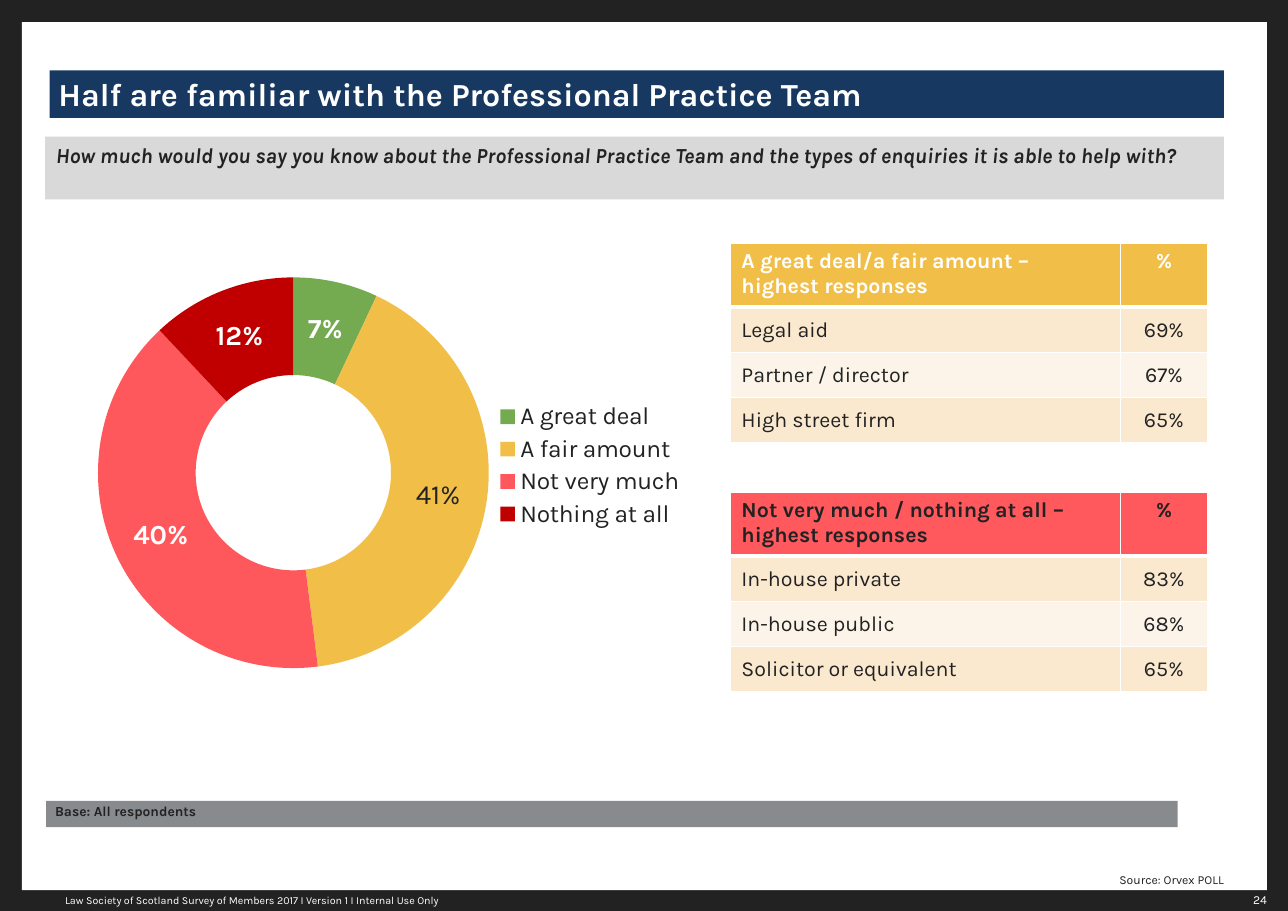
import pptx
import pptx.chart.data
import pptx.dml.color
import pptx.enum.chart
import pptx.enum.shapes
import pptx.enum.text
import pptx.oxml
import pptx.oxml.ns
import pptx.util

Inches, Pt = pptx.util.Inches, pptx.util.Pt
ALIGN, ANCHOR = pptx.enum.text.PP_ALIGN, pptx.enum.text.MSO_ANCHOR
FONT, INK, WHITE = "Karla", "222223", "FFFFFF"


def color(hex_value):
    return pptx.dml.color.RGBColor.from_string(hex_value)


def style(font, size, hex_value, bold=False, italic=False):
    font.name, font.size = FONT, Pt(size)
    font.bold, font.italic = bold, italic
    font.color.rgb = color(hex_value)


deck = pptx.Presentation()
deck.slide_width, deck.slide_height = Inches(11.69), Inches(8.27)
page = deck.slides.add_slide(deck.slide_layouts[6])

# Dark frame around a white sheet
page.background.fill.solid()
page.background.fill.fore_color.rgb = color(INK)

# Sheet, title, question, base bar and footer:
# bounds, fill, text, size, ink, bold, italic, alignment, anchor, insets, wrap
panels = [
    ((0.2, 0.2, 11.3, 7.88), WHITE, "", 8, INK, False, False,
     ALIGN.LEFT, ANCHOR.TOP, (0, 0), True),
    ((10.95, 8.06, 0.63, 0.23), None, "24", 8, WHITE, False, False,
     ALIGN.RIGHT, ANCHOR.TOP, (0.08, 0.04), True),
    ((0.59, 8.07, 5.35, 0.2), None,
     "Law Society of Scotland Survey of Members 2017 I Version 1 I Internal Use Only",
     7, WHITE, False, False, ALIGN.LEFT, ANCHOR.MIDDLE, (0, 0), False),
    ((7.89, 7.85, 3.22, 0.2), None, "Source: Orvex POLL", 8, INK, False, False,
     ALIGN.RIGHT, ANCHOR.BOTTOM, (0, 0), True),
    ((0.45, 0.64, 10.66, 0.43), "173861",
     "Half are familiar with the Professional Practice Team",
     21, WHITE, True, False, ALIGN.LEFT, ANCHOR.BOTTOM, (0.08, 0.04), True),
    ((0.41, 1.24, 10.7, 0.57), "D9D9D9",
     "How much would you say you know about the Professional Practice Team "
     "and the types of enquiries it is able to help with?",
     14, INK, True, True, ALIGN.LEFT, ANCHOR.TOP, (0.1, 0.05), True),
    ((0.42, 7.27, 10.27, 0.24), "888B8D", "Base: All respondents",
     9, INK, True, False, ALIGN.LEFT, ANCHOR.TOP, (0.08, 0.02), True),
]
for bounds, fill, text, size, ink, bold, italic, align, anchor, insets, wrap in panels:
    bounds = [Inches(length) for length in bounds]
    if fill:
        box = page.shapes.add_shape(pptx.enum.shapes.MSO_SHAPE.RECTANGLE, *bounds)
        box.shadow.inherit = False
        box.fill.solid()
        box.fill.fore_color.rgb = color(fill)
        box.line.fill.background()
    else:
        box = page.shapes.add_textbox(*bounds)
    if not text:
        continue
    frame = box.text_frame
    frame.margin_left = frame.margin_right = Inches(insets[0])
    frame.margin_top = frame.margin_bottom = Inches(insets[1])
    frame.word_wrap, frame.vertical_anchor = wrap, anchor
    frame.text = text
    para = frame.paragraphs[0]
    para.alignment = align
    style(para.runs[0].font, size, ink, bold, italic)

# Doughnut chart of familiarity
answers = [("A great deal", 0.07, "74AA50"), ("A fair amount", 0.41, "F1BE48"),
           ("Not very much", 0.4, "FE585D"), ("Nothing at all", 0.12, "C00000")]
data = pptx.chart.data.CategoryChartData(number_format="0%")
data.categories = [name for name, share, fill in answers]
data.add_series("Series 1", [share for name, share, fill in answers])
chart = page.shapes.add_chart(
    pptx.enum.chart.XL_CHART_TYPE.DOUGHNUT,
    Inches(0.65), Inches(1.98), Inches(5.67), Inches(4.49), data).chart
style(chart.font, 18, INK)
chart.has_title = False
chart.has_legend = True
chart.legend.position = pptx.enum.chart.XL_LEGEND_POSITION.RIGHT
chart.legend.include_in_layout = False
style(chart.legend.font, 16, INK)

ring = chart.plots[0]
ring.vary_by_categories = True
labels = ring.series[0].data_labels
labels.show_value = True
labels.show_percentage = False
labels.number_format, labels.number_format_is_linked = "0%", False
style(labels.font, 18, WHITE, bold=True)
for index, (name, share, fill) in enumerate(answers):
    slice_format = ring.series[0].points[index].format
    slice_format.fill.solid()
    slice_format.fill.fore_color.rgb = color(fill)
    slice_format.line.fill.background()
style(ring.series[0].points[1].data_label.font, 18, INK)

# Fixed place of the ring inside the chart
plot_area = chart.element.find(".//" + pptx.oxml.ns.qn("c:plotArea"))
for layout in plot_area.findall(pptx.oxml.ns.qn("c:layout")):
    plot_area.remove(layout)
plot_area.insert(0, pptx.oxml.parse_xml(
    f'<c:layout {pptx.oxml.ns.nsdecls("c")}><c:manualLayout>'
    '<c:layoutTarget val="inner"/><c:xMode val="edge"/><c:yMode val="edge"/>'
    '<c:x val="0.04"/><c:y val="0.12"/><c:w val="0.63"/><c:h val="0.79"/>'
    '</c:manualLayout></c:layout>'))

# Tables of highest responses
tables = [
    (2.21, "F1BE48", WHITE, [
        ("A great deal/a fair amount –\nhighest responses", "%"),
        ("Legal aid", "69%"), ("Partner / director", "67%"),
        ("High street firm", "65%")]),
    (4.47, "FF585D", INK, [
        ("Not very much / nothing at all – highest responses", "%"),
        ("In-house private", "83%"), ("In-house public", "68%"),
        ("Solicitor or equivalent", "65%")]),
]
for top, header_fill, header_ink, rows in tables:
    table = page.shapes.add_table(len(rows), 2, Inches(6.63), Inches(top),
                                  Inches(4.33), Inches(1.81)).table
    table.columns[0].width, table.columns[1].width = Inches(3.54), Inches(0.79)
    for row, texts in enumerate(rows):
        header = row == 0
        table.rows[row].height = Inches(0.58 if header else 0.41)
        for column, text in enumerate(texts):
            cell = table.cell(row, column)
            # White borders, thicker under the header
            widths = {"L": 1, "R": 1, "T": 3 if row == 1 else 1, "B": 3 if header else 1}
            for side, width in widths.items():
                cell._tc.get_or_add_tcPr().append(pptx.oxml.parse_xml(
                    f'<a:ln{side} {pptx.oxml.ns.nsdecls("a")} w="{Pt(width)}">'
                    f'<a:solidFill><a:srgbClr val="{WHITE}"/></a:solidFill></a:ln{side}>'))
            cell.fill.solid()
            cell.fill.fore_color.rgb = color(
                header_fill if header else "FAE8CF" if row % 2 else "FCF4E9")
            cell.vertical_anchor = ANCHOR.TOP if header else ANCHOR.MIDDLE
            cell.text_frame.text = text
            for para in cell.text_frame.paragraphs:
                para.alignment = ALIGN.CENTER if column else ALIGN.LEFT
                style(para.runs[0].font, 14, header_ink if header else INK, bold=header)

deck.save("out.pptx")
